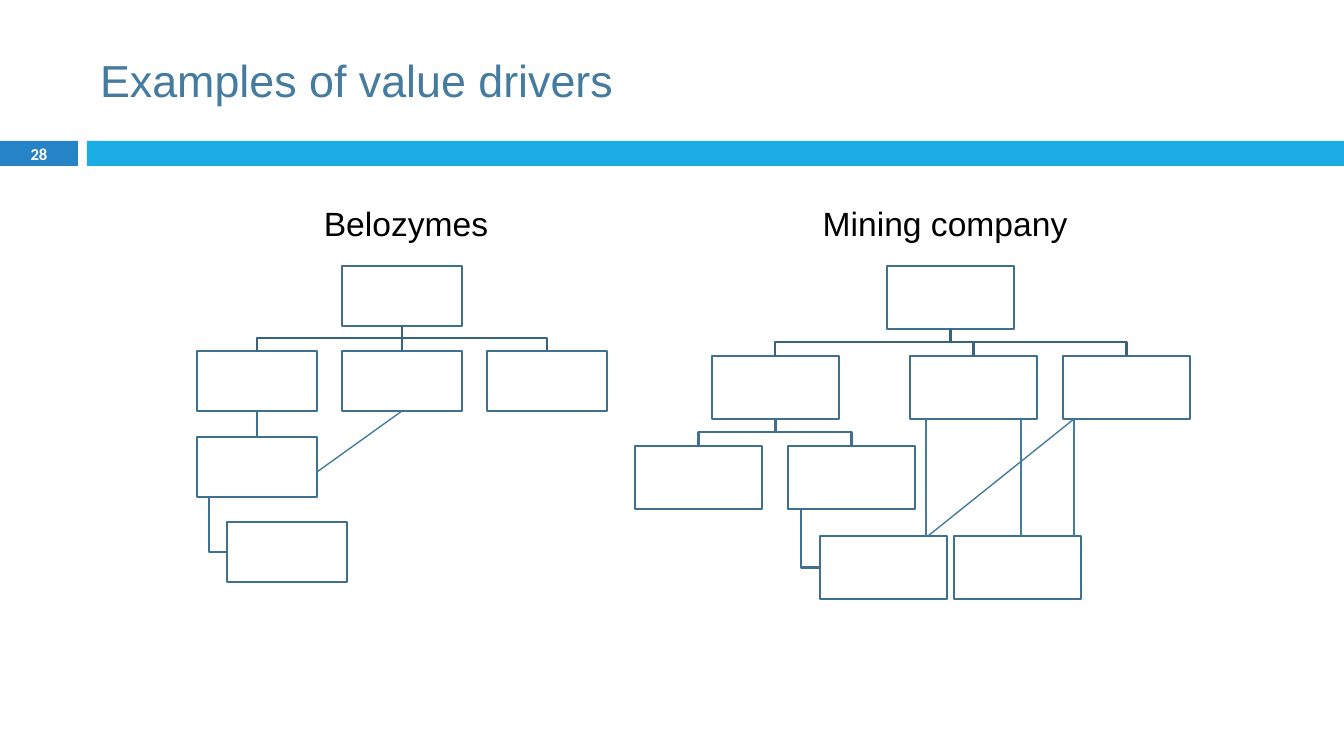
from lxml.etree import SubElement
from pptx import Presentation
from pptx.dml.color import RGBColor
from pptx.enum.shapes import MSO_CONNECTOR as LINE, MSO_SHAPE as SHAPE
from pptx.enum.text import MSO_ANCHOR as ANCHOR, MSO_AUTO_SIZE as FIT, PP_ALIGN as ALIGN
from pptx.oxml.ns import qn
from pptx.util import Emu, Pt

EMU_PER_PX = 914400 / 100.8
COLORS = {
    "title": "457B9E",
    "number_bar": "2683C6",
    "bar": "1CADE4",
    "box": "3F708F",
    "branch": "37637F",
    "link": "457B9E",
    "white": "FFFFFF",
    "black": "000000",
}
TOP, BOTTOM = 0, 2


def px(value):
    return Emu(round(value * EMU_PER_PX))


def color(name):
    return RGBColor.from_string(COLORS[name])


class Page:
    def __init__(self, deck):
        self.slide = deck.slides.add_slide(deck.slide_layouts[5])
        self.shapes = self.slide.shapes

    def set_text(self, shape, text, size, ink, align, font="Arial", bold=False):
        frame = shape.text_frame
        frame.text = text
        frame.word_wrap = True
        frame.auto_size = FIT.NONE
        frame.vertical_anchor = ANCHOR.MIDDLE
        para = frame.paragraphs[0]
        para.alignment = align
        para.font.name, para.font.size, para.font.bold = font, Pt(size), bold
        para.font.color.rgb = color(ink)

    def title(self, text, left, top, width, height):
        title = self.shapes.title
        title.left, title.top, title.width, title.height = map(px, (left, top, width, height))
        self.set_text(title, text, 32, "title", ALIGN.LEFT)

    def text(self, text, left, top, width, height, size, ink, **style):
        box = self.shapes.add_textbox(*map(px, (left, top, width, height)))
        self.set_text(box, text, size, ink, ALIGN.CENTER, **style)

    def rectangle(self, left, top, width, height, fill, outline=None):
        shape = self.shapes.add_shape(SHAPE.RECTANGLE, *map(px, (left, top, width, height)))
        shape.shadow.inherit = False
        shape.fill.solid()
        shape.fill.fore_color.rgb = color(fill)
        if outline:
            shape.line.color.rgb = color(outline)
            shape.line.width = Pt(1.5)
        else:
            shape.line.fill.background()
        return shape

    def boxes(self, places, width, height):
        return {
            name: self.rectangle(left, top, width, height, "white", "box")
            for name, (left, top) in places.items()
        }

    def straight(self, start=(0, 0), end=(0, 0), ink="link", weight=1):
        line = self.shapes.add_connector(LINE.STRAIGHT, *map(px, (*start, *end)))
        line.line.color.rgb = color(ink)
        line.line.width = Pt(weight)
        SubElement(line._element.spPr, qn("a:effectLst"))
        return line

    def elbow(self, points, ink):
        builder = self.shapes.build_freeform(*points[0])
        builder.add_line_segments(points[1:], close=False)
        shape = builder.convert_to_shape()
        shape.shadow.inherit = False
        shape.fill.background()
        shape.line.color.rgb = color(ink)
        shape.line.width = Pt(1.5)

    def branch(self, parent, children, ink="box"):
        """Join a parent's bottom to the top of each child."""
        x, y = parent.left + parent.width // 2, parent.top + parent.height
        for child in children:
            if child.left == parent.left:
                line = self.straight(ink=ink, weight=1.5)
                line.begin_connect(parent, BOTTOM)
                line.end_connect(child, TOP)
                continue
            child_x, middle = child.left + child.width // 2, (y + child.top) // 2
            self.elbow([(x, y), (x, middle), (child_x, middle), (child_x, child.top)], ink)

    def hang(self, parent, child):
        """Join a parent's lower left part to the left side of a child."""
        x, y = parent.left + parent.width // 10, child.top + child.height // 2
        self.elbow([(x, parent.top + parent.height), (x, y), (child.left, y)], "box")


def build_enzyme_tree(page):
    columns, rows = [197, 342, 487], [266, 351, 437, 522]
    places = {
        "root": (columns[1], rows[0]),
        "left": (columns[0], rows[1]),
        "middle": (columns[1], rows[1]),
        "right": (columns[2], rows[1]),
        "lower": (columns[0], rows[2]),
        "leaf": (columns[0] + 30, rows[3]),
    }
    tree = page.boxes(places, 120, 60)
    page.branch(tree["root"], [tree["left"], tree["middle"], tree["right"]], "branch")
    page.branch(tree["left"], [tree["lower"]])
    page.hang(tree["lower"], tree["leaf"])
    page.straight(end=(317, 472)).begin_connect(tree["middle"], BOTTOM)


def build_mining_tree(page):
    rows = [266, 356, 446, 536]
    places = {
        "root": (887, rows[0]),
        "left": (712, rows[1]),
        "middle": (910, rows[1]),
        "right": (1063, rows[1]),
        "lower left": (635, rows[2]),
        "lower right": (788, rows[2]),
        "leaf": (820, rows[3]),
        "second leaf": (954, rows[3]),
    }
    tree = page.boxes(places, 127, 63)
    page.branch(tree["root"], [tree["left"], tree["middle"], tree["right"]], "branch")
    page.branch(tree["left"], [tree["lower left"], tree["lower right"]])
    page.hang(tree["lower right"], tree["leaf"])
    for bottom_x, top_x in [(928, 1074), (926, 926), (1021, 1021), (1074, 1074)]:
        page.straight((bottom_x, rows[3]), (top_x, rows[1] + 63))


def main():
    deck = Presentation()
    deck.slide_width, deck.slide_height = px(1344), px(756)
    page = Page(deck)
    page.rectangle(0, 141, 78, 25, "number_bar")
    page.rectangle(87, 141, 1257, 25, "bar")
    page.title("Examples of value drivers", 90, 25, 1198, 109)
    page.text("28", 0, 140, 78, 27, 11.9, "white", font="Calibri", bold=True)
    for heading, center in [("Belozymes", 406), ("Mining company", 945)]:
        page.text(heading, center - 150, 198, 300, 50, 24, "black")
    build_enzyme_tree(page)
    build_mining_tree(page)
    deck.save("out.pptx")


if __name__ == "__main__":
    main()
